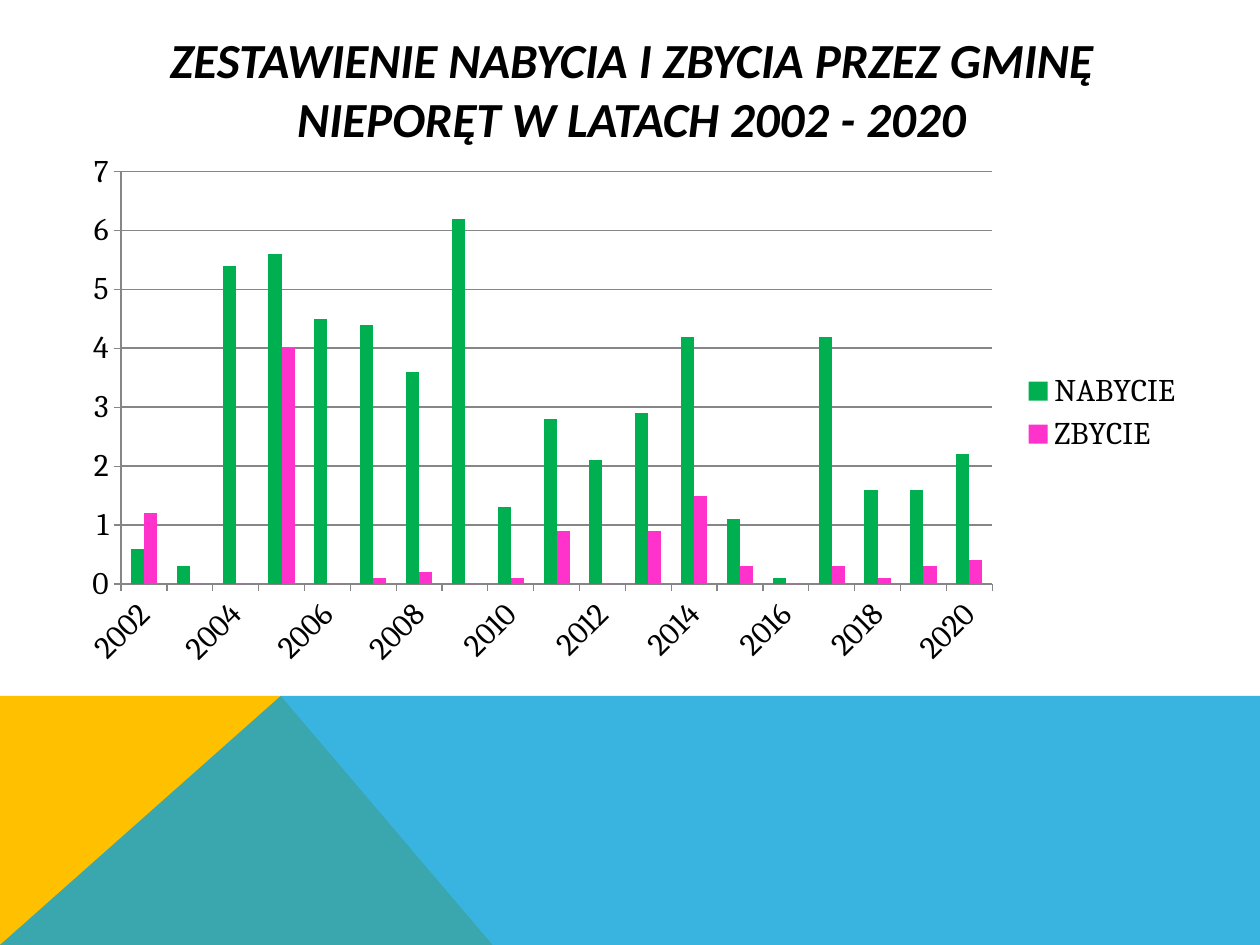
from lxml import etree
from pptx import Presentation
from pptx import util as u
from pptx.chart.data import CategoryChartData
from pptx.dml.color import RGBColor
from pptx.enum import chart as ch, text
from pptx.oxml.ns import qn

Cm, Pt = u.Cm, u.Pt


def paint(fill, tone):
    fill.solid()
    fill.fore_color.rgb = RGBColor.from_string(tone)


def style(font, **kinds):
    for key, val in kinds.items():
        setattr(font, key, val)
    paint(font.fill, "000000")


prs = Presentation()
prs.slide_width, prs.slide_height = Cm(25.4), Cm(19.05)
slide = prs.slides.add_slide(prs.slide_layouts[6])

wide, base, top, peak = 25.4, 19.05, 14.03, 5.66
bands = [
    ("FFC000", 100, [(0, base), (0, top), (peak, top), (9.93, base)]),
    ("08A1D9", 80, [(0, base), (peak, top), (wide, top), (wide, base)]),
]
for tone, alpha, spots in bands:
    spots = [(Cm(x), Cm(y)) for x, y in spots]
    form = slide.shapes.build_freeform(*spots[0])
    form.add_line_segments(spots[1:], close=True)
    band = form.convert_to_shape()
    band.shadow.inherit = False
    band.line.fill.background()
    paint(band.fill, tone)
    if alpha < 100:
        clr = band._element.spPr.find(".//" + qn("a:srgbClr"))
        etree.SubElement(clr, qn("a:alpha"), val=str(alpha * 1000))

title = slide.shapes.add_textbox(Cm(2.29), Cm(1.02), Cm(20.88), Cm(1.52))
frame = title.text_frame
frame.word_wrap = True
frame.vertical_anchor = text.MSO_ANCHOR.MIDDLE
para = frame.paragraphs[0]
para.alignment = text.PP_ALIGN.CENTER
run = para.add_run()
run.text = "ZESTAWIENIE NABYCIA I ZBYCIA PRZEZ GMINĘ NIEPORĘT W LATACH 2002 - 2020"
style(run.font, name="Calibri", size=Pt(28), bold=True, italic=True)

rows = {
    "NABYCIE": ("00B050", [0.6, 0.3, 5.4, 5.6, 4.5, 4.4, 3.6, 6.2, 1.3, 2.8,
                           2.1, 2.9, 4.2, 1.1, 0.1, 4.2, 1.6, 1.6, 2.2]),
    "ZBYCIE": ("FF33CC", [1.2, 0, 0, 4, 0, 0.1, 0.2, 0, 0.1, 0.9,
                          0, 0.9, 1.5, 0.3, 0, 0.3, 0.1, 0.3, 0.4]),
}
data = CategoryChartData()
data.categories = [str(year) for year in range(2002, 2021)]
for name, (tone, vals) in rows.items():
    data.add_series(name, vals)
chart = slide.shapes.add_chart(
    ch.XL_CHART_TYPE.COLUMN_CLUSTERED,
    Cm(1.3), Cm(2.92), Cm(22.81), Cm(10.8), data).chart
style(chart.font, name="Cambria", size=Pt(18))
chart.has_title = False
chart.has_legend = True
chart.legend.position = ch.XL_LEGEND_POSITION.RIGHT
chart.legend.include_in_layout = False

plot = chart.plots[0]
plot.gap_width, plot.overlap = 150, 0
plot.vary_by_categories = False
for bar in plot.series:
    paint(bar.format.fill, rows[bar.name][0])
    bar.invert_if_negative = False

cat, val = chart.category_axis, chart.value_axis
val.minimum_scale, val.maximum_scale, val.major_unit = 0, 7, 1
val.has_major_gridlines = True
val.tick_labels.number_format = "General"
val.tick_labels.number_format_is_linked = False
for axis in (cat, val):
    axis.major_tick_mark = ch.XL_TICK_MARK.OUTSIDE
    style(axis.tick_labels.font, name="Cambria", size=Pt(18))
for line, width in ((cat.format.line, 0.75), (val.format.line, 0.75),
                    (val.major_gridlines.format.line, 1)):
    paint(line.fill, "868686")
    line.width = Pt(width)
cat._element.find(qn("c:txPr")).find(qn("a:bodyPr")).set("rot", "-2700000")

area = chart._chartSpace.chart.plotArea
for old in area.findall(qn("c:layout")):
    area.remove(old)
place = etree.Element(qn("c:layout"))
area.insert(0, place)
man = etree.SubElement(place, qn("c:manualLayout"))
for tag, worth in {"layoutTarget": "inner", "xMode": "edge", "yMode": "edge",
                   "x": "0.05", "y": "0.05", "w": "0.77", "h": "0.77"}.items():
    etree.SubElement(man, qn("c:" + tag), val=worth)

prs.save("out.pptx")
